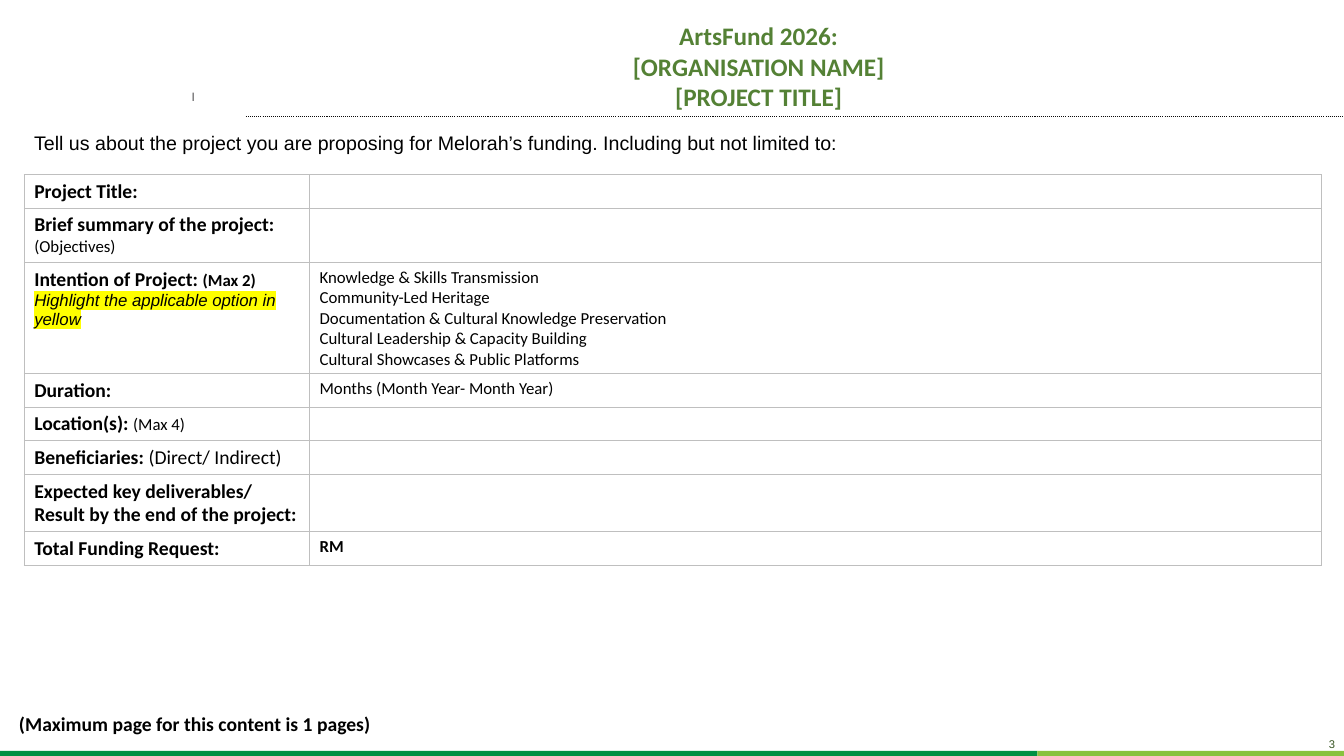
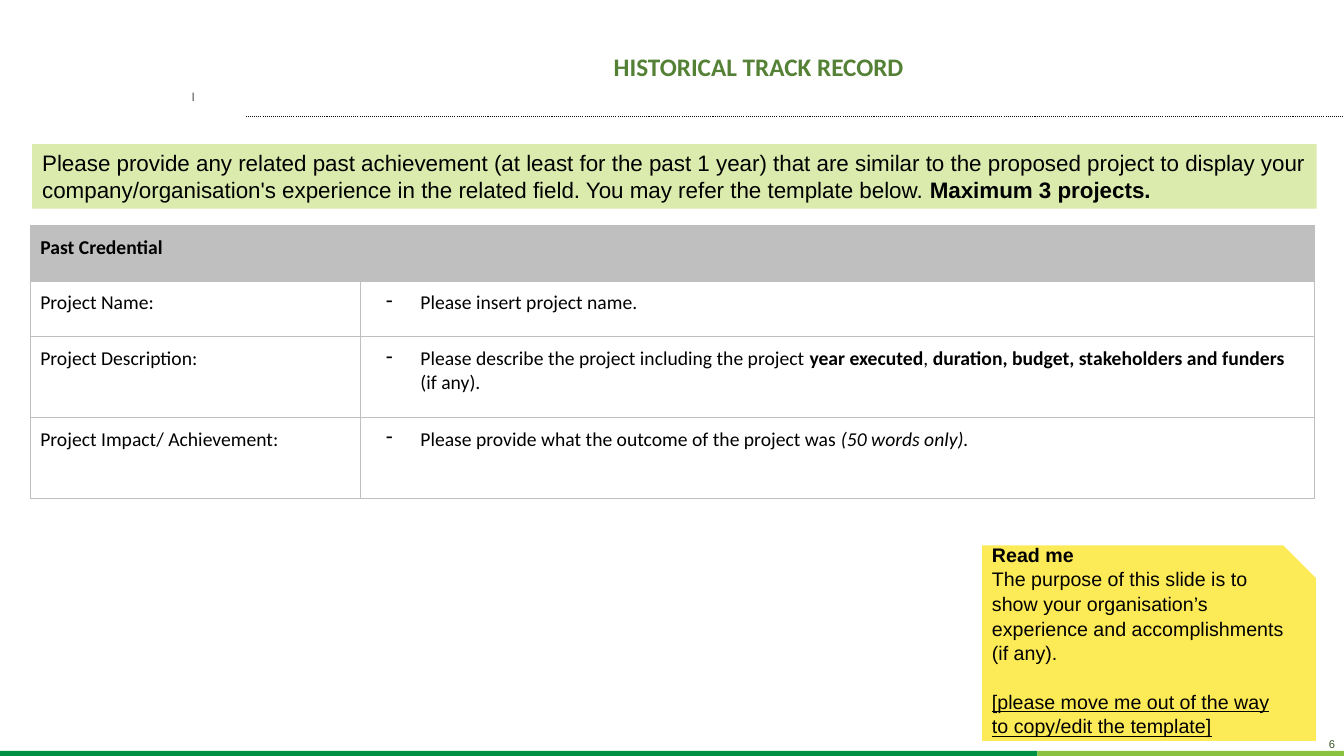
"""Build the project proposal and track record template slides."""
from typing import NamedTuple

from lxml import etree
from pptx import Presentation
from pptx.dml.color import RGBColor
from pptx.enum import dml, shapes, text
from pptx.oxml import ns
from pptx.util import Inches, Pt

COLOURS = {
    "dark_green": "009044",
    "light_green": "88C23E",
    "title": "548135",
    "page_number": "385623",
    "tick": "414042",
    "rule": "0C0C0C",
    "ink": "000000",
    "border": "BFBFBF",
    "banner": "DBEBAE",
    "note": "FDEA57",
    "marker": "FFFF00",
}


class Span(NamedTuple):
    text: str
    size: float = 14
    bold: bool = False
    italic: bool = False
    underline: bool = False
    font: str = "Calibri"
    colour: str = "ink"
    marker: str = ""


class Para(NamedTuple):
    spans: tuple[Span, ...]
    dash: bool = False
    align: text.PP_ALIGN = text.PP_ALIGN.LEFT
    space_before: float = 0
    line_spacing: float = 1
    indent: float = 0


class Area(NamedTuple):
    left: float
    top: float
    width: float
    height: float

    def lengths(self) -> tuple:
        return tuple(Inches(value) for value in self)


class Insets(NamedTuple):
    left: float = 0.1
    top: float = 0.05
    right: float = 0.1
    bottom: float = 0.05


class Band(NamedTuple):
    area: Area
    colour: str


class Grid(NamedTuple):
    left: float
    top: float
    widths: tuple[float, ...]
    heights: tuple[float, ...]
    cells: tuple
    insets: Insets = Insets()
    header: bool = False


BANDS = (
    Band(Area(0, 7.45, 10.29, 0.05), "dark_green"),
    Band(Area(10.29, 7.45, 3.04, 0.05), "light_green"),
    Band(Area(1.91, 0.92, 0.01, 0.08), "tick"),
)
WIDE_INSETS = Insets(0.1, 0.1, 0.1, 0.1)


def rgb(name: str) -> RGBColor:
    return RGBColor.from_string(COLOURS[name])


def add_element(parent, tag: str, **attributes: str):
    return etree.SubElement(parent, ns.qn(tag), attributes)


def add_colour(parent, name: str) -> None:
    add_element(parent, "a:srgbClr", val=COLOURS[name])


def line(*spans: Span, **options) -> Para:
    return Para(spans, **options)


def bold(words: str, size: float = 14) -> Span:
    return Span(words, size, bold=True)


def arial(words: str, size: float = 14, **options) -> Span:
    return Span(words, size, font="Arial", **options)


def format_span(run, span: Span) -> None:
    font = run.font
    font.size = Pt(span.size)
    font.bold = span.bold
    font.italic = span.italic
    font.underline = span.underline
    font.color.rgb = rgb(span.colour)
    if span.marker:
        add_colour(add_element(font._element, "a:highlight"), span.marker)
    font.name = span.font


def write(frame, paras: tuple[Para, ...]) -> None:
    frame.text = "\n".join("" for _ in paras)
    for paragraph, para in zip(frame.paragraphs, paras):
        properties = paragraph._p.get_or_add_pPr()
        if para.dash:
            properties.set("marL", str(Inches(0.5)))
            properties.set("indent", str(Inches(-0.34)))
            add_colour(add_element(properties, "a:buClr"), "ink")
            add_element(properties, "a:buChar", char="-")
        elif para.indent:
            properties.set("marL", str(Inches(para.indent)))
        paragraph.alignment = para.align
        if para.space_before:
            paragraph.space_before = Pt(para.space_before)
        paragraph.line_spacing = para.line_spacing
        if len(para.spans) == 1:
            paragraph.text = para.spans[0].text
        else:
            for span in para.spans:
                paragraph.add_run().text = span.text
        if len(para.spans) == len(paragraph.runs):
            for run, span in zip(paragraph.runs, para.spans):
                format_span(run, span)
        else:
            for run in paragraph.runs:
                format_span(run, para.spans[0])


def fill_frame(frame, paras: tuple[Para, ...], insets: Insets, anchor) -> None:
    frame.word_wrap = True
    frame.margin_left, frame.margin_top, frame.margin_right, frame.margin_bottom = (
        Inches(value) for value in insets
    )
    frame.vertical_anchor = anchor
    write(frame, paras)


def add_text(page, area: Area, paras: tuple[Para, ...], insets=Insets(),
             anchor=text.MSO_ANCHOR.TOP) -> None:
    box = page.shapes.add_textbox(*area.lengths())
    fill_frame(box.text_frame, paras, insets, anchor)


def add_block(page, area: Area, colour: str, kind=shapes.MSO_SHAPE.RECTANGLE):
    block = page.shapes.add_shape(kind, *area.lengths())
    block.shadow.inherit = False
    block.fill.solid()
    block.fill.fore_color.rgb = rgb(colour)
    block.line.fill.background()
    return block


def add_borders(cell) -> None:
    properties = cell._tc.get_or_add_tcPr()
    for tag in ("a:lnL", "a:lnR", "a:lnT", "a:lnB"):
        border = add_element(properties, tag, w=str(Pt(0.5)))
        add_colour(add_element(border, "a:solidFill"), "border")


def add_grid(page, grid: Grid) -> None:
    area = Area(grid.left, grid.top, sum(grid.widths), sum(grid.heights))
    table = page.shapes.add_table(
        len(grid.heights), len(grid.widths), *area.lengths()).table
    table.first_row = table.horz_banding = False
    for column, width in zip(table.columns, grid.widths):
        column.width = Inches(width)
    for row, height, contents in zip(table.rows, grid.heights, grid.cells):
        row.height = Inches(height)
        for cell, paras in zip(row.cells, contents):
            add_borders(cell)
            cell.fill.background()
            cell.margin_left, cell.margin_top, cell.margin_right, cell.margin_bottom = (
                Inches(value) for value in grid.insets
            )
            if paras:
                write(cell.text_frame, paras)
            else:
                empty = cell.text_frame.paragraphs[0]._p
                add_element(empty, "a:endParaRPr", sz="1200")
    if grid.header:
        for cell in table.rows[0].cells:
            cell.fill.solid()
            cell.fill.fore_color.rgb = rgb("border")
        table.cell(0, 0).merge(table.cell(0, len(grid.widths) - 1))


def add_page(deck, title: str, number: str):
    page = deck.slides.add_slide(deck.slide_layouts[6])
    for band in BANDS:
        add_block(page, band.area, band.colour)
    rule = page.shapes.add_connector(
        shapes.MSO_CONNECTOR.STRAIGHT,
        Inches(2.44), Inches(1.16), Inches(13.33), Inches(1.16))
    rule.line.color.rgb = rgb("rule")
    rule.line.width = Pt(0.75)
    rule.line.dash_style = dml.MSO_LINE.ROUND_DOT
    add_element(rule._element.spPr, "a:effectLst")
    number_span = arial(number, 8, colour="page_number")
    add_text(page, Area(10.38, 7.29, 2.96, 0.18),
             (line(number_span, align=text.PP_ALIGN.RIGHT),),
             anchor=text.MSO_ANCHOR.MIDDLE)
    title_span = Span(title, 18, bold=True, colour="title")
    add_text(page, Area(2.61, 0.19, 9.33, 0.92),
             (line(title_span, align=text.PP_ALIGN.CENTER, indent=0.5),),
             Insets(0, 0.01, 0, 0), text.MSO_ANCHOR.MIDDLE)
    return page


def build_proposal(deck) -> None:
    page = add_page(deck, "ArtsFund 2026:\v[ORGANISATION NAME]\v[PROJECT TITLE]", "3")
    intentions = (
        "Knowledge & Skills Transmission",
        "Community-Led Heritage",
        "Documentation & Cultural Knowledge Preservation",
        "Cultural Leadership & Capacity Building",
        "Cultural Showcases & Public Platforms",
    )
    highlight = arial("Highlight the applicable option in yellow", 12,
                      italic=True, marker="marker")
    cells = (
        ((line(bold("Project Title:")),), ()),
        ((line(bold("Brief summary of the project: "), Span("(Objectives)", 12)),), ()),
        ((line(bold("Intention of Project: "), bold("(Max 2)", 12)), line(highlight)),
         tuple(line(Span(words, 12)) for words in intentions)),
        ((line(bold("Duration:")),),
         (line(Span("Months (Month Year- Month Year)", 12)),)),
        ((line(bold("Location(s): "), Span("(Max 4)", 12)),), ()),
        ((line(bold("Beneficiaries: "), Span("(Direct/ Indirect)")),), ()),
        ((line(bold("Expected key deliverables/ Result by the end of the project:")),), ()),
        ((line(bold("Total Funding Request:")),), (line(bold("RM", 12)),)),
    )
    heights = (0.33, 0.54, 1.1, 0.33, 0.33, 0.33, 0.57, 0.33)
    add_grid(page, Grid(0.24, 1.73, (2.83, 10.03), heights, cells))
    add_text(page, Area(0.09, 7.01, 6.67, 0.34),
             (line(bold("(Maximum page for this content is 1 pages)")),))
    add_text(page, Area(0.24, 1.25, 10.4, 0.34), (line(arial(
        "Tell us about the project you are proposing for Melorah’s funding. "
        "Including but not limited to:")),))


def build_track_record(deck) -> None:
    page = add_page(deck, "HISTORICAL TRACK RECORD", "6")
    banner = add_block(page, Area(0.32, 1.43, 12.74, 0.64), "banner")
    request = arial(
        "Please provide any related past achievement (at least for the past 1 year) "
        "that are similar to the proposed project to display your "
        "company/organisation's experience in the related field. "
        "You may refer the template below. ", 16)
    fill_frame(banner.text_frame,
               (line(request, arial("Maximum 3 projects.", 16, bold=True)),),
               Insets(), text.MSO_ANCHOR.TOP)
    cells = (
        ((line(bold("Past Credential")),), ()),
        ((line(Span("Project Name:")),),
         (line(Span("Please insert project name."), dash=True),)),
        ((line(Span("Project Description:")),),
         (line(Span("Please describe the project including the project "),
               bold("year executed"), Span(", "),
               bold("duration, budget, stakeholders and funders"),
               Span(" (if any)."), dash=True),)),
        ((line(Span("Project Impact/ Achievement:")),),
         (line(Span("Please provide what the outcome of the project was "),
               Span("(50 words only).", italic=True), dash=True),)),
    )
    add_grid(page, Grid(0.3, 2.24, (3.27, 9.47), (0.55, 0.55, 0.8, 0.8), cells,
                        WIDE_INSETS, header=True))
    note = add_block(page, Area(9.74, 5.41, 3.31, 1.94), "note",
                     shapes.MSO_SHAPE.SNIP_1_RECTANGLE)
    note.adjustments[0] = 0.167
    purpose = arial("The purpose of this slide is to show your organisation’s "
                    "experience and accomplishments (if any).")
    reminder = arial("[please move me out of the way to copy/edit the template]",
                     underline=True)
    fill_frame(note.text_frame,
               (line(arial("Read me", bold=True), line_spacing=1.05),
                line(purpose, line_spacing=1.05),
                line(reminder, line_spacing=1.05, space_before=16.8)),
               Insets(0.1, 0.1, 0.1, 0.33), text.MSO_ANCHOR.MIDDLE)


def main() -> None:
    deck = Presentation()
    deck.slide_width, deck.slide_height = Inches(13.33), Inches(7.5)
    build_proposal(deck)
    build_track_record(deck)
    deck.save("out.pptx")


if __name__ == "__main__":
    main()
